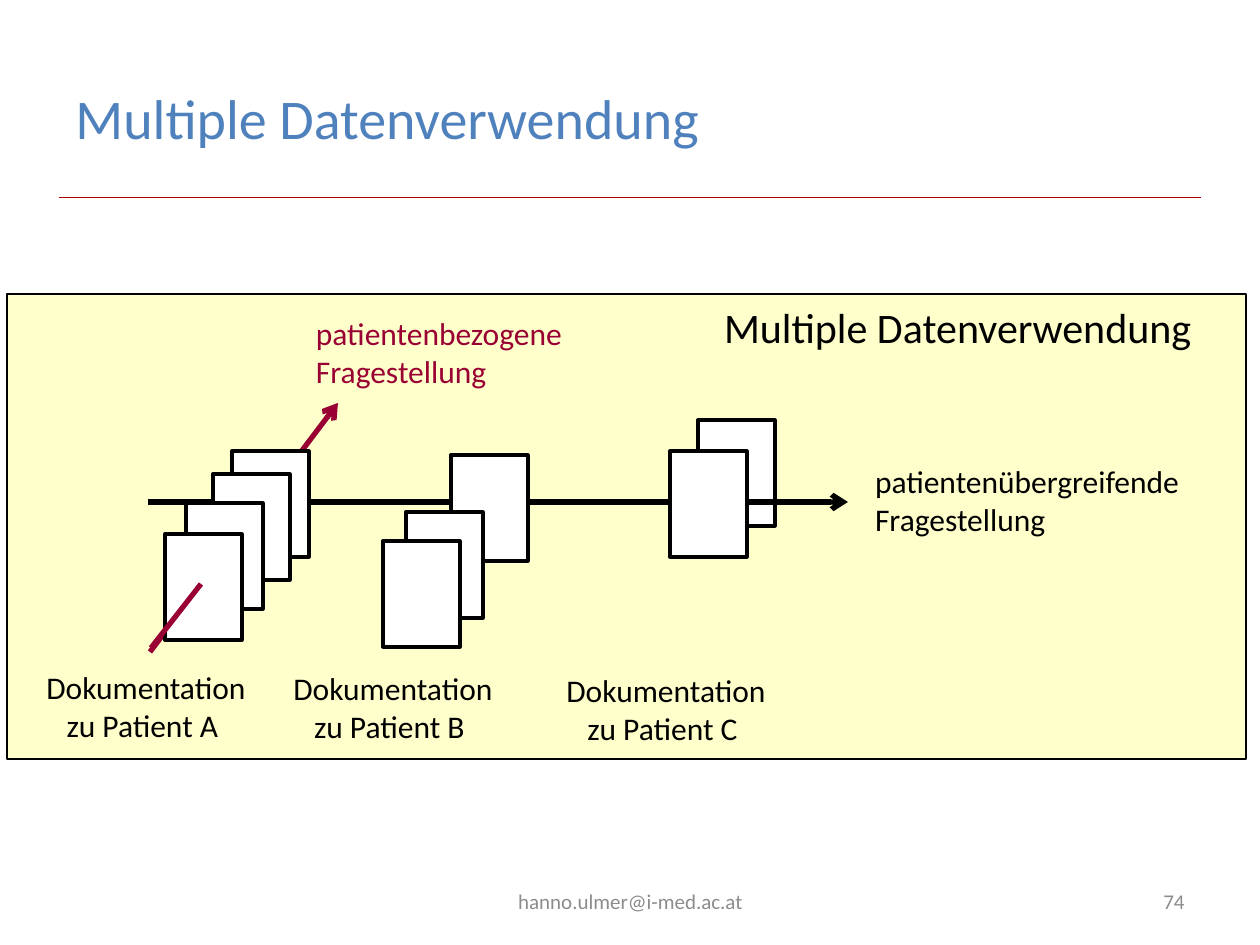
from dataclasses import dataclass

from lxml.etree import SubElement
from pptx import Presentation
from pptx.dml.color import RGBColor
from pptx.enum.shapes import MSO_CONNECTOR, MSO_SHAPE
from pptx.enum.text import MSO_ANCHOR, MSO_AUTO_SIZE, PP_ALIGN
from pptx.oxml.ns import qn
from pptx.util import Emu, Pt

PX_PER_INCH = 126
SLIDE_SIZE = (1260, 945)


@dataclass(frozen=True)
class Theme:
    font: str = "Calibri"
    title: str = "4F81BD"
    rule: str = "AC0000"
    footer: str = "8C8C8C"
    panel: str = "FFFFCC"
    sheet: str = "FFFFFF"
    ink: str = "000000"
    accent: str = "990033"
    title_size: int = 32
    heading_size: int = 24
    label_size: int = 18
    footer_size: int = 12
    rule_width: float = 0.25
    panel_width: float = 1
    sheet_width: float = 1.88
    arrow_width: float = 3


def px(length):
    return Emu(round(length * 914400 / PX_PER_INCH))


def set_attributes(target, values):
    for name, value in values.items():
        setattr(target, name, value)


class SlideBuilder:
    def __init__(self, slide, theme):
        self.slide = slide
        self.theme = theme

    def rectangle(self, box, fill, width):
        shape = self.slide.shapes.add_shape(MSO_SHAPE.RECTANGLE, *map(px, box))
        shape.shadow.inherit = False
        shape.fill.solid()
        shape.fill.fore_color.rgb = RGBColor.from_string(fill)
        shape.line.color.rgb = RGBColor.from_string(self.theme.ink)
        shape.line.width = Pt(width)

    def sheet(self, left, top):
        self.rectangle((left, top, 77, 106), self.theme.sheet, self.theme.sheet_width)

    def line(self, start, end, color, width, arrow=False):
        connector = self.slide.shapes.add_connector(
            MSO_CONNECTOR.STRAIGHT, *map(px, (*start, *end)))
        connector.line.color.rgb = RGBColor.from_string(color)
        connector.line.width = Pt(width)
        if arrow:
            SubElement(connector.line._get_or_add_ln(), qn("a:tailEnd"), type="arrow")
        SubElement(connector._element.spPr, qn("a:effectLst"))

    def text(self, box, lines, size, color, align=PP_ALIGN.LEFT, **frame_format):
        frame = self.slide.shapes.add_textbox(*map(px, box)).text_frame
        set_attributes(frame, {"word_wrap": True, **frame_format})
        for index, line in enumerate(lines):
            paragraph = frame.paragraphs[0] if index == 0 else frame.add_paragraph()
            paragraph.text = line
            paragraph.alignment = align
            set_attributes(paragraph.font, {"name": self.theme.font, "size": Pt(size)})
            paragraph.font.color.rgb = RGBColor.from_string(color)

    def label(self, box, lines, size, color, align=PP_ALIGN.LEFT):
        """Add unwrapped text without margins, in a box that fits it."""
        margins = {f"margin_{side}": 0 for side in ("left", "top", "right", "bottom")}
        self.text(box, lines, size, color, align, word_wrap=False,
                  auto_size=MSO_AUTO_SIZE.SHAPE_TO_FIT_TEXT, **margins)


def add_frame(builder):
    """Add the title, its rule and the footer."""
    theme = builder.theme
    middle = {"vertical_anchor": MSO_ANCHOR.MIDDLE}
    builder.line((59, 197), (1201, 197), theme.rule, theme.rule_width)
    builder.text((63, 38, 915, 158), ["Multiple Datenverwendung"],
                 theme.title_size, theme.title, **middle)
    builder.text((431, 876, 399, 50), ["hanno.ulmer@i-med.ac.at"],
                 theme.footer_size, theme.footer, PP_ALIGN.CENTER, **middle)
    builder.text((903, 876, 294, 50), ["74"],
                 theme.footer_size, theme.footer, PP_ALIGN.RIGHT, **middle)


def add_diagram(builder):
    theme = builder.theme
    builder.rectangle((7, 294, 1239, 465), theme.panel, theme.panel_width)

    # The arrows run between the sheets, so stacking order matters here.
    builder.sheet(698, 420)
    builder.line((148, 502), (848, 502), theme.ink, theme.arrow_width, arrow=True)
    builder.line((150, 652), (338, 403), theme.accent, theme.arrow_width, arrow=True)
    front_sheets = {
        "A": [(232, 451), (213, 474), (186, 503), (165, 534)],
        "B": [(451, 455), (406, 512), (383, 541)],
        "C": [(670, 451)],
    }
    for positions in front_sheets.values():
        for left, top in positions:
            builder.sheet(left, top)
    builder.line((151, 648), (201, 584), theme.accent, theme.arrow_width)

    for patient, left, top in (("A", 45, 668), ("B", 292, 669), ("C", 565, 671)):
        builder.label((left, top, 202, 77), ["Dokumentation", f"zu Patient {patient} "],
                      theme.label_size, theme.ink, PP_ALIGN.CENTER)
    builder.label((316, 314, 249, 77), ["patientenbezogene", "Fragestellung"],
                  theme.label_size, theme.accent)
    builder.label((875, 462, 309, 77), ["patientenübergreifende", "Fragestellung"],
                  theme.label_size, theme.ink)
    builder.label((724, 302, 483, 51), ["Multiple Datenverwendung"],
                  theme.heading_size, theme.ink)


def main():
    presentation = Presentation()
    presentation.slide_width, presentation.slide_height = map(px, SLIDE_SIZE)
    slide = presentation.slides.add_slide(presentation.slide_layouts[6])
    builder = SlideBuilder(slide, Theme())
    add_frame(builder)
    add_diagram(builder)
    presentation.save("out.pptx")


if __name__ == "__main__":
    main()
